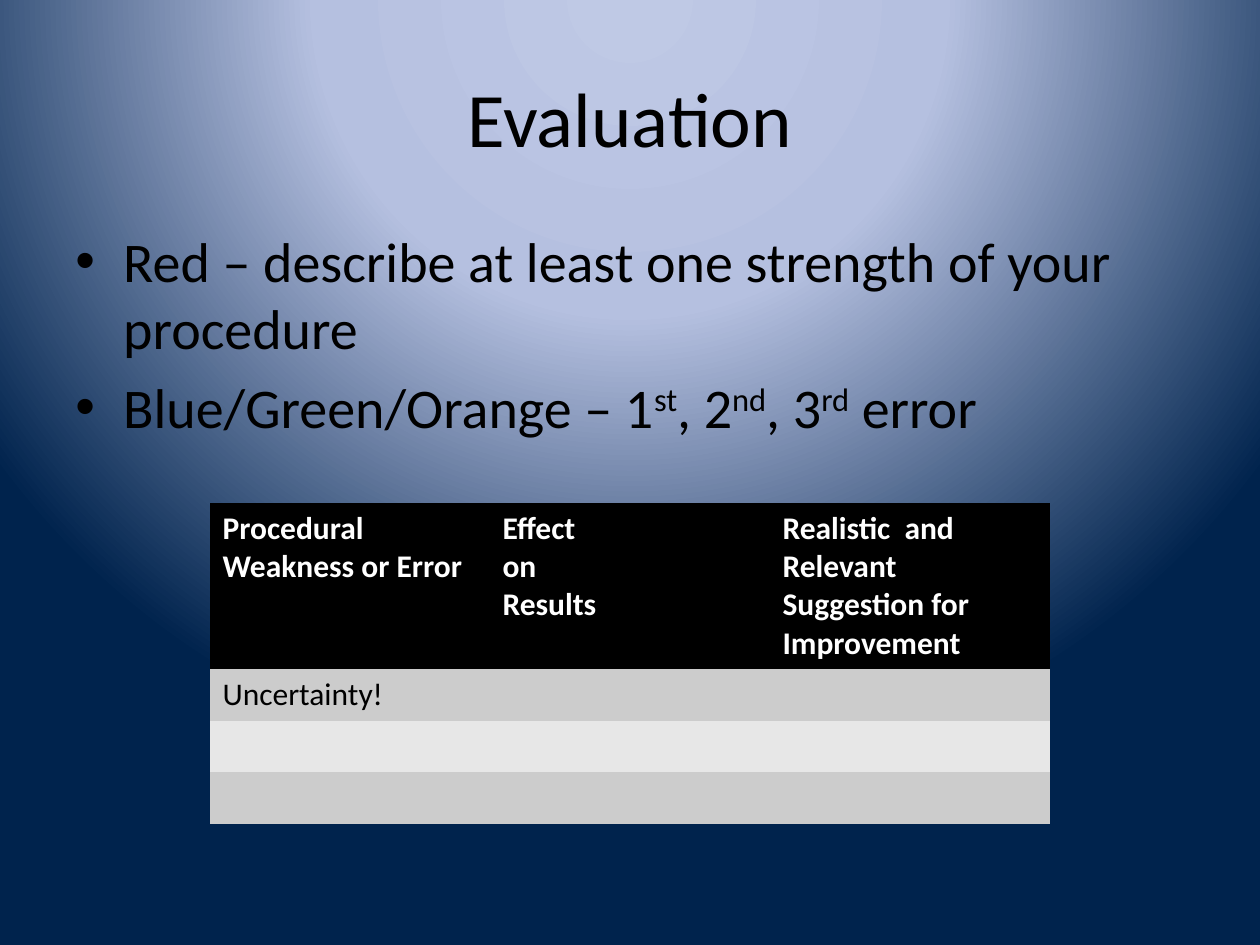
from pptx import Presentation
from pptx import util as u
from pptx.dml.color import RGBColor
from pptx.enum import text
from pptx.oxml import parse_xml
from pptx.oxml.ns import nsdecls, qn

COLORS = {
    "glow": "BFC9E5", "haze": "B5C0E0", "navy": "00234D",
    "black": "000000", "white": "FFFFFF", "band": "CCCCCC", "pale": "E7E7E7",
}
NO_TABLE_STYLE = "{2D5ABB26-0587-4C30-8999-92F81FD0307C}"


def format_run(run, size, color="black", bold=False):
    run.font.name = "Calibri"
    run.font.size = u.Pt(size)
    run.font.bold = bold
    run.font.color.rgb = RGBColor.from_string(COLORS[color])


prs = Presentation()
prs.slide_width, prs.slide_height = u.Inches(10), u.Inches(7.5)
W, H = prs.slide_width, prs.slide_height
slide = prs.slides.add_slide(prs.slide_layouts[6])

# Background: glow from above the top edge
slide.background.fill.solid()
background = slide.element.find(".//" + qn("p:bgPr"))
stops = "".join(
    f'<a:gs pos="{share * 1000}"><a:srgbClr val="{COLORS[name]}"/></a:gs>'
    for share, name in ((0, "glow"), (40, "haze"), (100, "navy"))
)
background.replace(background[0], parse_xml(
    f'<a:gradFill {nsdecls("a")} rotWithShape="1"><a:gsLst>{stops}</a:gsLst>'
    '<a:path path="circle"><a:fillToRect l="50000" t="-80000" r="50000" b="180000"/>'
    '</a:path></a:gradFill>'))

# Title
margin = int(W * 0.05)
title = slide.shapes.add_textbox(margin, int(H * 0.04), W - 2 * margin, H // 6).text_frame
title.word_wrap = True
title.vertical_anchor = text.MSO_ANCHOR.MIDDLE
title.text = "Evaluation"
title.paragraphs[0].alignment = text.PP_ALIGN.CENTER
format_run(title.paragraphs[0].runs[0], 44)

# Instructions: each is a list of (words, raised)
instructions = [
    [("Red – describe at least one strength of your procedure", False)],
    [("Blue/Green/Orange – 1", False), ("st", True), (", 2", False), ("nd", True),
     (", 3", False), ("rd", True), (" error", False)],
]
body = slide.shapes.add_textbox(margin, int(H * 7 / 30), W - 2 * margin, int(H * 0.66)).text_frame
body.word_wrap = True
for index, instruction in enumerate(instructions):
    paragraph = body.paragraphs[0] if index == 0 else body.add_paragraph()
    paragraph.space_before = u.Pt(6.4)
    properties = paragraph._p.get_or_add_pPr()
    properties.set("marL", str(u.Inches(0.38)))
    properties.set("indent", str(-u.Inches(0.38)))
    properties.append(parse_xml(f'<a:buFont {nsdecls("a")} typeface="Arial"/>'))
    properties.append(parse_xml(f'<a:buChar {nsdecls("a")} char="•"/>'))
    for words, raised in instruction:
        run = paragraph.add_run()
        run.text = words
        format_run(run, 32)
        if raised:
            run.font._element.set("baseline", "30000")

# Error table
rows = [
    ["Procedural Weakness or Error", "Effect\non\nResults",
     "Realistic  and Relevant Suggestion for Improvement"],
    ["Uncertainty!", "", ""],
    ["", "", ""],
    ["", "", ""],
]
row_fills = ["black", "band", "pale", "band"]
row_heights = [1.32, 0.41, 0.41, 0.41]
errors = slide.shapes.add_table(
    len(rows), 3, W // 6, int(H * 0.532), W * 2 // 3, u.Inches(sum(row_heights))).table
errors._tbl.tblPr.find(qn("a:tableStyleId")).text = NO_TABLE_STYLE
for r, entries in enumerate(rows):
    errors.rows[r].height = u.Inches(row_heights[r])
    for c, entry in enumerate(entries):
        cell = errors.cell(r, c)
        cell.fill.solid()
        cell.fill.fore_color.rgb = RGBColor.from_string(COLORS[row_fills[r]])
        cell.text_frame.text = entry
        for paragraph in cell.text_frame.paragraphs:
            for run in paragraph.runs:
                format_run(run, 18, "white" if r == 0 else "black", bold=r == 0)

prs.save("out.pptx")
